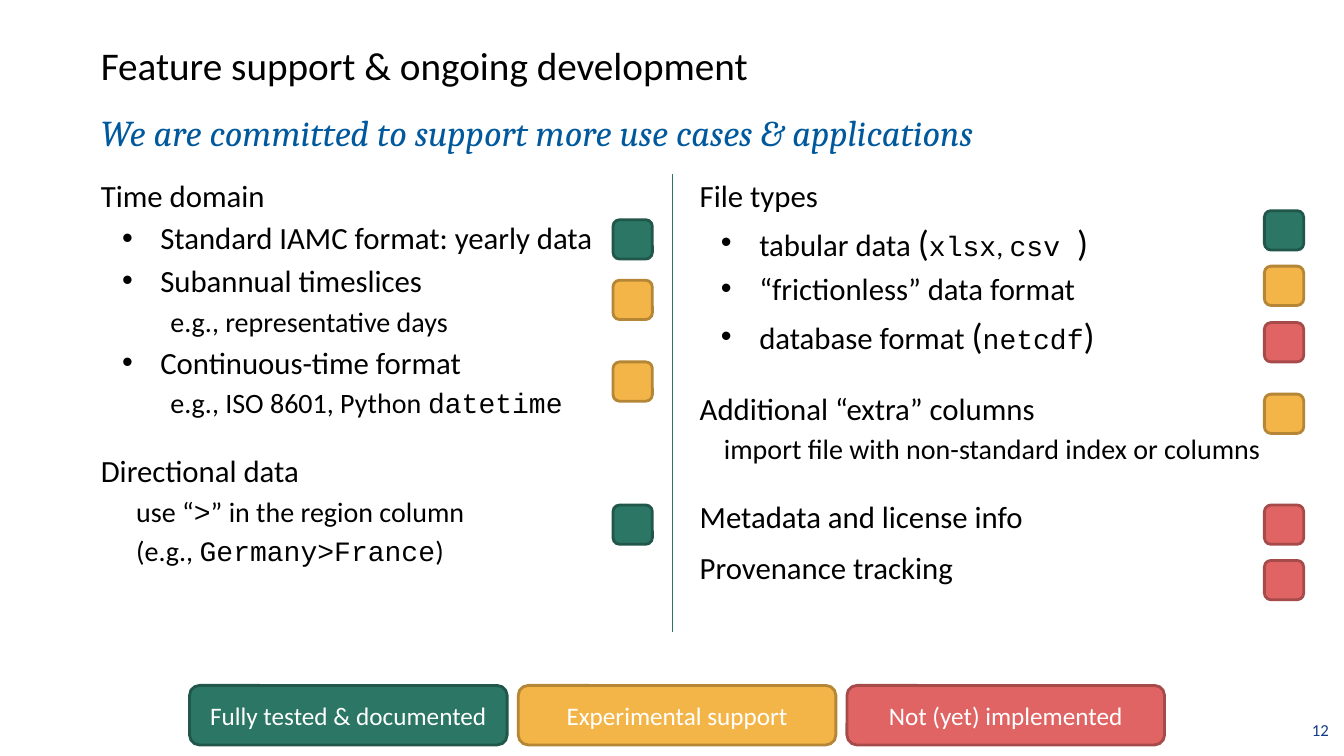
from lxml import etree
from pptx import Presentation
from pptx.dml.color import RGBColor
from pptx.enum.shapes import MSO_CONNECTOR, MSO_SHAPE
from pptx.enum.text import MSO_ANCHOR, MSO_AUTO_SIZE, PP_ALIGN
from pptx.oxml.ns import qn
from pptx.util import Inches, Pt

ROUNDED = MSO_SHAPE.ROUNDED_RECTANGLE
STRAIGHT = MSO_CONNECTOR.STRAIGHT
TOP, MIDDLE = MSO_ANCHOR.TOP, MSO_ANCHOR.MIDDLE
LEFT, CENTER, RIGHT = PP_ALIGN.LEFT, PP_ALIGN.CENTER, PP_ALIGN.RIGHT
NO_AUTOFIT = MSO_AUTO_SIZE.NONE

BODY_FONT, CODE_FONT = "Calibri", "Courier New"
# Status: fill, outline, legend label
STATUSES = {
    "tested": ("2B7664", "20574A", "Fully tested & documented"),
    "experimental": ("F3B548", "B48635", "Experimental support"),
    "missing": ("E06464", "A64A4A", "Not (yet) implemented"),
}


def rgb(value):
    return RGBColor.from_string(value)


def prepare_frame(shape, left, top, width, height, anchor):
    shape.left, shape.top = Inches(left), Inches(top)
    shape.width, shape.height = Inches(width), Inches(height)
    frame = shape.text_frame
    frame.word_wrap = True
    frame.auto_size = NO_AUTOFIT
    frame.vertical_anchor = anchor
    frame.margin_left = frame.margin_right = 0
    frame.margin_top = frame.margin_bottom = 0
    return frame


presentation = Presentation()
presentation.slide_width = Inches(13.33)
presentation.slide_height = Inches(7.5)
slide = presentation.slides.add_slide(presentation.slide_layouts[3])
shapes = slide.shapes
title, left_body, right_body = slide.placeholders
tagline = shapes.add_textbox(0, 0, 0, 0)
page_number = shapes.add_textbox(0, 0, 0, 0)

# Title, tagline and page number
single_lines = [
    (title, (1, 0.37, 11.66, 0.54), MIDDLE, "Feature support & ongoing development",
     28, BODY_FONT, "000000", LEFT),
    (tagline, (1, 1.07, 11.65, 0.47), MIDDLE,
     "We are committed to support more use cases & applications",
     26, "Cambria", "00599D", LEFT),
    (page_number, (12.65, 7.14, 0.53, 0.35), TOP, "12",
     12, BODY_FONT, "143C86", RIGHT),
]
for shape, box, anchor, text, size, font_name, color, alignment in single_lines:
    frame = prepare_frame(shape, *box, anchor)
    frame.text = text
    paragraph = frame.paragraphs[0]
    paragraph.alignment = alignment
    paragraph.font.size = Pt(size)
    paragraph.font.name = font_name
    paragraph.font.color.rgb = rgb(color)
    paragraph.font.italic = shape is tagline

# Paragraph styles: level, margin, hanging indent, space before, size
STYLES = {
    "first": (0, 0, 0, 0, 22),
    "heading": (0, 0, 0, 10, 22),
    "section": (0, 0, 0, 23, 22),
    "bullet": (1, 0.59, -0.38, 4, 22),
    "tall bullet": (1, 0.59, -0.38, 5, 22),
    "example": (2, 0.69, 0, 4, 20),
    "usage": (2, 0.35, 0, 4, 20),
    "remark": (2, 0.24, 0, 4, 20),
}
# Runs that differ from their paragraph: size, font
CODE = (20, CODE_FONT)
SMALL = (20, BODY_FONT)
BRACKET = (26, BODY_FONT)

time_column = [
    ("first", ["Time domain"]),
    ("bullet", ["Standard IAMC format: yearly data"]),
    ("bullet", ["Subannual timeslices"]),
    ("example", ["e.g., representative days"]),
    ("bullet", ["Continuous-time format"]),
    ("example", ["e.g., ISO 8601, Python ", ("datetime", CODE)]),
    ("section", ["Directional data"]),
    ("usage", ["use “", (">", CODE), "” in the region column"]),
    ("usage", ["(e.g., ", ("Germany>France", CODE), ")"]),
]
file_column = [
    ("first", ["File types"]),
    ("tall bullet", ["tabular data ", ("(", BRACKET), ("xlsx", CODE), (", ", SMALL),
                     ("csv ", CODE), (")", BRACKET)]),
    ("bullet", ["“frictionless” data format"]),
    ("tall bullet", ["database format ", ("(", BRACKET), ("netcdf", CODE),
                     (")", BRACKET)]),
    ("section", ["Additional “extra” columns"]),
    ("remark", ["import file with non-standard index or columns"]),
    ("section", ["Metadata and license info"]),
    ("heading", ["Provenance tracking"]),
]

# Two feature lists
for body, left, entries in [(left_body, 1, time_column), (right_body, 6.94, file_column)]:
    frame = prepare_frame(body, left, 1.75, 5.72, 5.23, TOP)
    for index, (style, runs) in enumerate(entries):
        paragraph = frame.add_paragraph() if index else frame.paragraphs[0]
        level, margin, indent, space_before, size = STYLES[style]
        paragraph.level = level
        paragraph.space_before = Pt(space_before)
        properties = paragraph._p.get_or_add_pPr()
        properties.set("marL", str(Inches(margin)))
        properties.set("indent", str(Inches(indent)))
        if "bullet" in style:
            etree.SubElement(properties, qn("a:buFont")).set("typeface", "Arial")
            etree.SubElement(properties, qn("a:buChar")).set("char", "•")
        else:
            etree.SubElement(properties, qn("a:buNone"))
        paragraph.font.size = Pt(size)
        paragraph.font.name = BODY_FONT
        paragraph.font.color.rgb = rgb("000000")
        for item in runs:
            run = paragraph.add_run()
            if isinstance(item, str):
                run.text = item
            else:
                run.text, (run_size, run_font) = item
                run.font.size = Pt(run_size)
                run.font.name = run_font

# Status markers beside the features, then the legend
MARKER_SIZE = 0.39
markers = {
    6.08: [(2.18, "tested"), (2.78, "experimental"), (3.59, "experimental"),
           (5.01, "tested")],
    12.54: [(2.09, "tested"), (2.64, "experimental"), (3.2, "missing"),
            (3.91, "experimental"), (5.01, "missing"), (5.56, "missing")],
}
boxes = [(left, top, MARKER_SIZE, MARKER_SIZE, status, False)
         for left, column in markers.items() for top, status in column]
boxes += [(1.88 + 3.26 * index, 6.8, 3.15, 0.59, status, True)
          for index, status in enumerate(STATUSES)]
for left, top, width, height, status, is_legend in boxes:
    fill, outline, label = STATUSES[status]
    box = shapes.add_shape(ROUNDED, Inches(left), Inches(top), Inches(width), Inches(height))
    box.shadow.inherit = False
    box.fill.solid()
    box.fill.fore_color.rgb = rgb(fill)
    box.line.color.rgb = rgb(outline)
    box.line.width = Pt(2)
    if is_legend:
        box.text_frame.text = label
        box.text_frame.vertical_anchor = MIDDLE
        paragraph = box.text_frame.paragraphs[0]
        paragraph.alignment = CENTER
        paragraph.font.size = Pt(18)
        paragraph.font.name = BODY_FONT
        paragraph.font.color.rgb = rgb("FFFFFF")

# Divider between the lists
divider = shapes.add_connector(STRAIGHT, Inches(6.67), Inches(1.73), Inches(6.67), Inches(6.27))
divider.line.color.rgb = rgb("2B7664")
divider.line.width = Pt(1)
etree.SubElement(divider._element.spPr, qn("a:effectLst"))

presentation.save("out.pptx")
